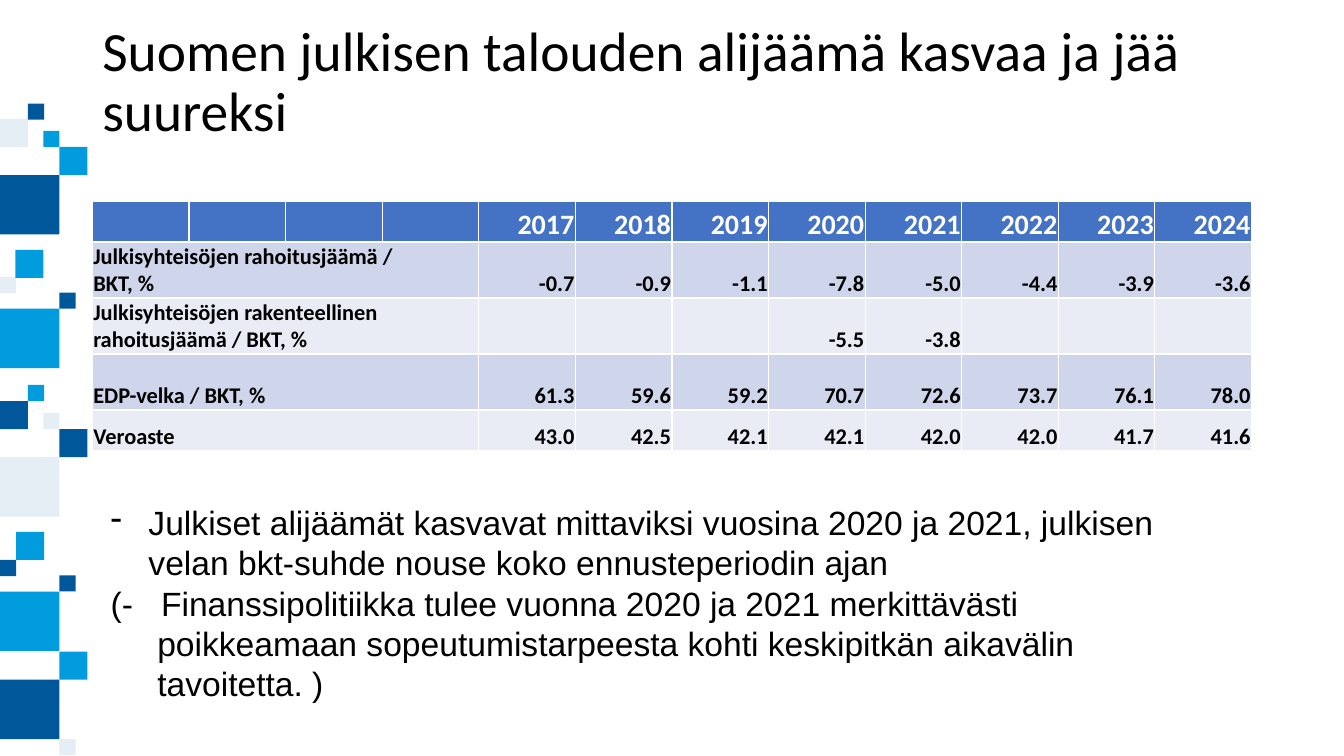
from pptx import Presentation
from pptx.dml.color import RGBColor
from pptx.enum.shapes import MSO_SHAPE as Shape
from pptx.enum.text import MSO_ANCHOR as Anchor, PP_ALIGN as Align
from pptx.oxml.ns import qn
from pptx.util import Pt
from lxml.etree import SubElement

NAVY, SKY, PALE = "00589A", "009CDD", "E5EEF5"
BIG, MID, TINY = 42.5, 20, 11.5


def paint(font, size, name, color, bold=False):
    font.size, font.name, font.bold = Pt(size), name, bold
    font.color.rgb = RGBColor.from_string(color)


def add_text(x, y, w, h):
    frame = slide.shapes.add_textbox(Pt(x), Pt(y), Pt(w), Pt(h)).text_frame
    frame.word_wrap = True
    return frame


deck = Presentation()
deck.slide_width, deck.slide_height = Pt(960), Pt(540)
slide = deck.slides.add_slide(deck.slide_layouts[6])

# Mosaic of squares down the left edge: left, top, side, colour
squares = [
    (0, 125, BIG, NAVY), (42.5, 105, MID, SKY), (31, 93.5, TINY, SKY),
    (0, 85, MID, PALE), (20, 74, TINY, NAVY), (42.5, 528, TINY, PALE),
    (0, 220.5, BIG, SKY), (42.5, 209, TINY, NAVY), (0, 198, TINY, PALE),
    (11, 178.5, MID, SKY), (0, 326.5, BIG, PALE), (42.5, 306.5, MID, NAVY),
    (31, 295, TINY, PALE), (0, 286.5, MID, NAVY), (20, 275, TINY, SKY),
    (0, 422.5, BIG, SKY), (42.5, 411, TINY, NAVY), (0, 400, TINY, NAVY),
    (11.5, 380, MID, SKY), (0, 485.5, BIG, NAVY), (42.5, 465.5, MID, SKY),
]
for x, y, side, color in squares:
    high = min(side, 540 - y)
    square = slide.shapes.add_shape(Shape.RECTANGLE, Pt(x), Pt(y), Pt(side), Pt(high))
    square.shadow.inherit = False
    square.fill.solid()
    square.fill.fore_color.rgb = RGBColor.from_string(color)
    square.line.fill.background()

# Title, raised within its box
title = add_text(66, 28.8, 828, 104.4)
title.vertical_anchor = Anchor.MIDDLE
title.margin_bottom = Pt(46)
title.text = "Suomen julkisen talouden alijäämä kasvaa ja jää suureksi"
title.paragraphs[0].line_spacing = 0.9
paint(title.paragraphs[0].runs[0].font, 39.6, "Calibri", "000000")

# Table: the label spans four columns, then one column per year
rows = [
    ("", "2017 2018 2019 2020 2021 2022 2023 2024".split()),
    ("Julkisyhteisöjen rahoitusjäämä /\nBKT, %",
     "-0.7 -0.9 -1.1 -7.8 -5.0 -4.4 -3.9 -3.6".split()),
    ("Julkisyhteisöjen rakenteellinen rahoitusjäämä / BKT, %",
     ["", "", "", "-5.5", "-3.8", "", "", ""]),
    ("EDP-velka / BKT, %", "61.3 59.6 59.2 70.7 72.6 73.7 76.1 78.0".split()),
    ("Veroaste", "43.0 42.5 42.1 42.1 42.0 42.0 41.7 41.6".split()),
]
highs = [28.8, 40, 40, 40, 29.3]
grid = slide.shapes.add_table(5, 12, Pt(66), Pt(144), Pt(828), Pt(sum(highs))).table
for col in grid.columns:
    col.width = Pt(69)
for r, (label, values) in enumerate(rows):
    grid.rows[r].height = Pt(highs[r])
    if r:
        grid.cell(r, 0).merge(grid.cell(r, 3))
    for c, text in enumerate([label, "", "", ""] + values):
        cell = grid.cell(r, c)
        cell.fill.solid()
        fill = "4472C4" if r == 0 else "CFD5EA" if r % 2 else "E9EBF5"
        cell.fill.fore_color.rgb = RGBColor.from_string(fill)
        if not text:
            continue
        cell.vertical_anchor = Anchor.BOTTOM
        cell.margin_left = cell.margin_right = cell.margin_top = Pt(0.7)
        cell.margin_bottom = 0
        cell.text_frame.text = text
        for para in cell.text_frame.paragraphs:
            para.alignment = Align.RIGHT if c else Align.LEFT
            paint(para.runs[0].font, 16 if r else 20, "Calibri",
                  "000000" if r else "FFFFFF", True)

# Notes under the table: text, left margin, first-line indent
points = [
    ("Julkiset alijäämät kasvavat mittaviksi vuosina 2020 ja 2021, julkisen "
     "velan bkt-suhde nouse koko ennusteperiodin ajan", 27, -27),
    ("(-\tFinanssipolitiikka tulee vuonna 2020 ja 2021 merkittävästi", 36, -36),
    ("poikkeamaan sopeutumistarpeesta kohti keskipitkän aikavälin", 33.3, 0),
    ("tavoitetta. )", 33.3, 0),
]
body = add_text(72, 355, 782.6, 152.6)
body.text = "\n".join(text for text, left, first in points)
for i, (para, (text, left, first)) in enumerate(zip(body.paragraphs, points)):
    props = para._p.get_or_add_pPr()
    props.set("marL", str(Pt(left)))
    props.set("indent", str(Pt(first)))
    if i == 0:
        SubElement(props, qn("a:buFontTx"))
        SubElement(props, qn("a:buChar")).set("char", "-")
    paint(para.runs[0].font, 24, "Arial", "000000")

deck.save("out.pptx")
